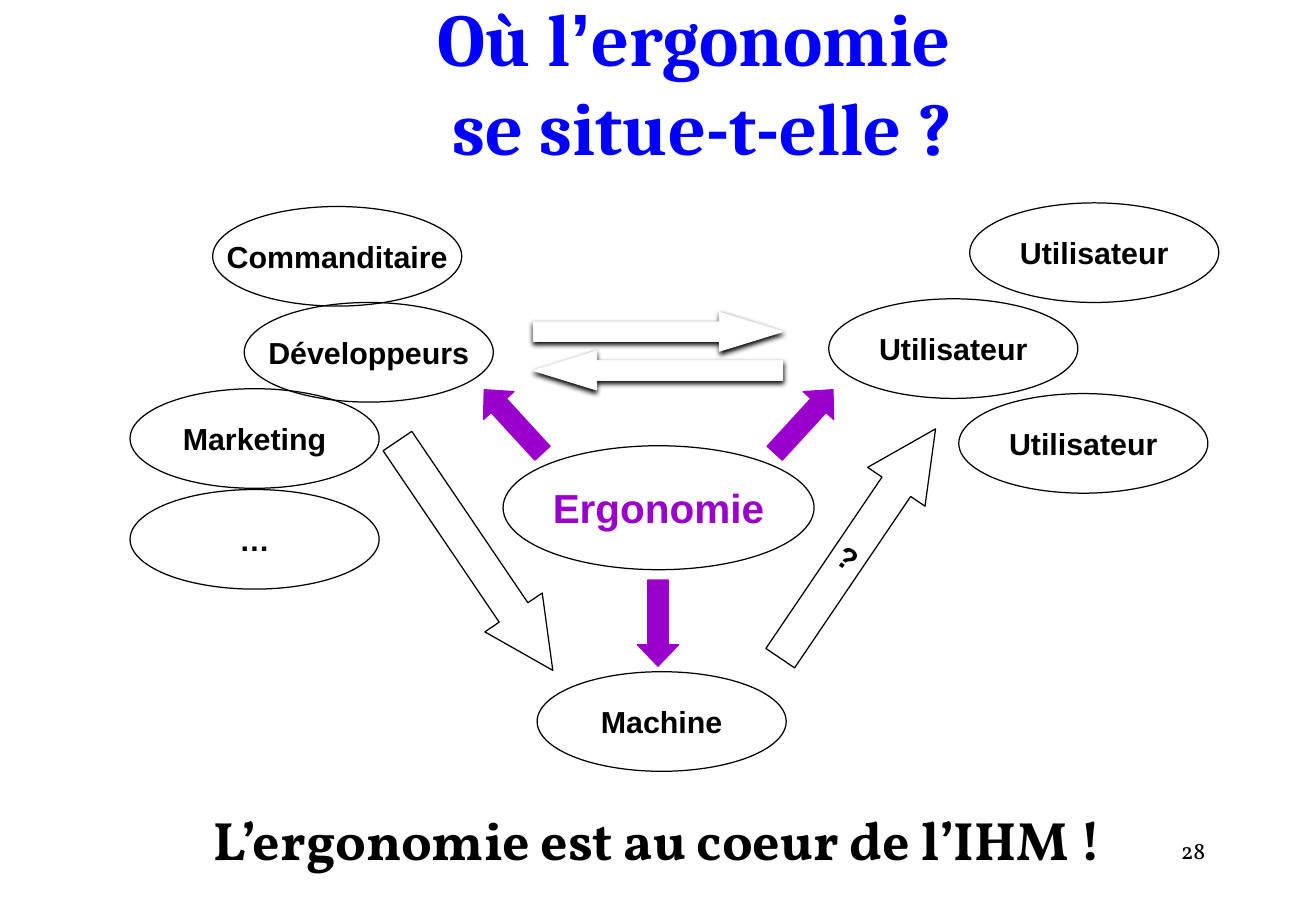
from lxml import etree
from pptx import Presentation
from pptx import util as u
from pptx.dml.color import RGBColor
from pptx.enum import shapes, text
from pptx.oxml import ns

PX = 9144
BLACK = RGBColor(0x00, 0x00, 0x00)
BLUE = RGBColor(0x00, 0x00, 0xFF)
PURPLE = RGBColor(0x99, 0x00, 0xCC)
WHITE = RGBColor(0xFF, 0xFF, 0xFF)
PALE = RGBColor(0xF9, 0xF9, 0xF9)

ACTOR_SIZE = (205, 82)
ACTORS = [
    ("Machine", 335, 386),
    ("Commanditaire", 68, 3),
    ("Développeurs", 94, 82),
    ("Marketing", 0, 153),
    ("…", 0, 236),
    ("Utilisateur", 691, 0),
    ("Utilisateur", 575, 79),
    ("Utilisateur", 682, 157),
]
INFLUENCES = [(519, 163, 312.5), (280, 163, 227.5), (399, 329, 90)]
DIALOGUES = [(90, 0), (122, 180)]


def px(*lengths):
    """Turn px lengths into EMU."""
    return [u.Emu(length * PX) for length in lengths]


def style(paragraph, font_name, size, color, bold=True, align=text.PP_ALIGN.CENTER):
    """Set the font and alignment of a paragraph."""
    font = paragraph.font
    font.name, font.size, font.bold = font_name, u.Pt(size), bold
    font.color.rgb = color
    paragraph.alignment = align


def add_line(slide, box, words, *look, **options):
    """Place one line of text in a box."""
    frame = slide.shapes.add_textbox(*px(*box)).text_frame
    frame.word_wrap = True
    frame.text = words
    style(frame.paragraphs[0], *look, **options)


def add_outline(slide, kind, box, line=BLACK, fill=None):
    """Place a thin-lined preset shape without shadow."""
    outline = slide.shapes.add_shape(kind, *px(*box))
    outline.shadow.inherit = False
    outline.line.color.rgb = line
    outline.line.width = u.Pt(0.75)
    if fill is None:
        outline.fill.background()
    else:
        outline.fill.solid()
        outline.fill.fore_color.rgb = fill
    return outline


def label(outline, words, size=18, color=BLACK):
    """Write a centred label inside a shape."""
    frame = outline.text_frame
    frame.word_wrap = False
    frame.vertical_anchor = text.MSO_ANCHOR.MIDDLE
    frame.text = words
    style(frame.paragraphs[0], "Arial", size, color)


def add_arrow(slide, box, angle, head, line=BLACK, fill=None):
    """Place a block arrow pointing at a clockwise angle from the right."""
    arrow = add_outline(slide, shapes.MSO_SHAPE.RIGHT_ARROW, box, line, fill)
    arrow.rotation = angle
    arrow.adjustments[0] = 0.5
    arrow.adjustments[1] = head
    return arrow


def cast_shadow(arrow):
    """Give an arrow a soft black shadow below it."""
    effects = arrow.element.spPr.find(ns.qn("a:effectLst"))
    shadow = etree.SubElement(
        effects, ns.qn("a:outerShdw"), blurRad=str(u.Pt(3.1)), dist=str(u.Pt(1.6)),
        dir="5400000", algn="ctr", rotWithShape="0")
    etree.SubElement(shadow, ns.qn("a:srgbClr"), val=str(BLACK))


def add_title(slide, box):
    """Place the two-line question."""
    frame = slide.shapes.add_textbox(*px(*box)).text_frame
    frame.word_wrap = True
    frame.vertical_anchor = text.MSO_ANCHOR.MIDDLE
    question = frame.paragraphs[0]
    style(question, "Cambria", 44, BLUE)
    question.add_run().text = "Où l"
    apostrophe = question.add_run()
    apostrophe.text = "’"
    apostrophe.font.name = "Arial"
    question.add_run().text = "ergonomie "
    question.add_line_break()
    question.add_run().text = "se situe-t-elle ?"


def add_actors(slide, left, top):
    """Place the ellipses around the central one."""
    oval = shapes.MSO_SHAPE.OVAL
    for name, x, y in ACTORS:
        label(add_outline(slide, oval, (left + x, top + y, *ACTOR_SIZE)), name)
    heart = add_outline(slide, oval, (left + 307, top + 200, 256, 102))
    label(heart, "Ergonomie", 24, PURPLE)


def add_exchanges(slide, left, top):
    """Place the arrows between the ellipses."""
    for x, y, angle in INFLUENCES:
        add_arrow(slide, (left + x, top + y, 71, 34), angle, 0.52, PURPLE, PURPLE)
    add_arrow(slide, (left + 170, top + 262, 228, 57), 55.9, 1.01)
    doubt = add_arrow(slide, (left + 485, top + 252, 228, 57), 304.1, 1.01)
    label(doubt, "?")
    doubt.text_frame._txBody.bodyPr.set("vert", "vert")
    for y, angle in DIALOGUES:
        cast_shadow(add_arrow(
            slide, (left + 332, top + y, 205, 32), angle, 1.62, PALE, WHITE))


def add_footer(slide, left, top):
    """Place the conclusion and the slide number."""
    add_line(slide, (left, top, 819, 64), "L’ergonomie est au coeur de l’IHM !",
             "Vollkorn", 32, BLACK)
    add_line(slide, (left + 644, top + 24, 226, 50), "28", "Vollkorn", 14, BLACK,
             bold=False, align=text.PP_ALIGN.RIGHT)


def main():
    """Build and save the slide."""
    deck = Presentation()
    deck.slide_width, deck.slide_height = px(1083, 750)
    slide = deck.slides.add_slide(deck.slide_layouts[6])
    add_title(slide, (81, 5, 994, 124))
    add_actors(slide, 107, 167)
    add_exchanges(slide, 107, 167)
    add_footer(slide, 132, 659)
    deck.save("out.pptx")


if __name__ == "__main__":
    main()
